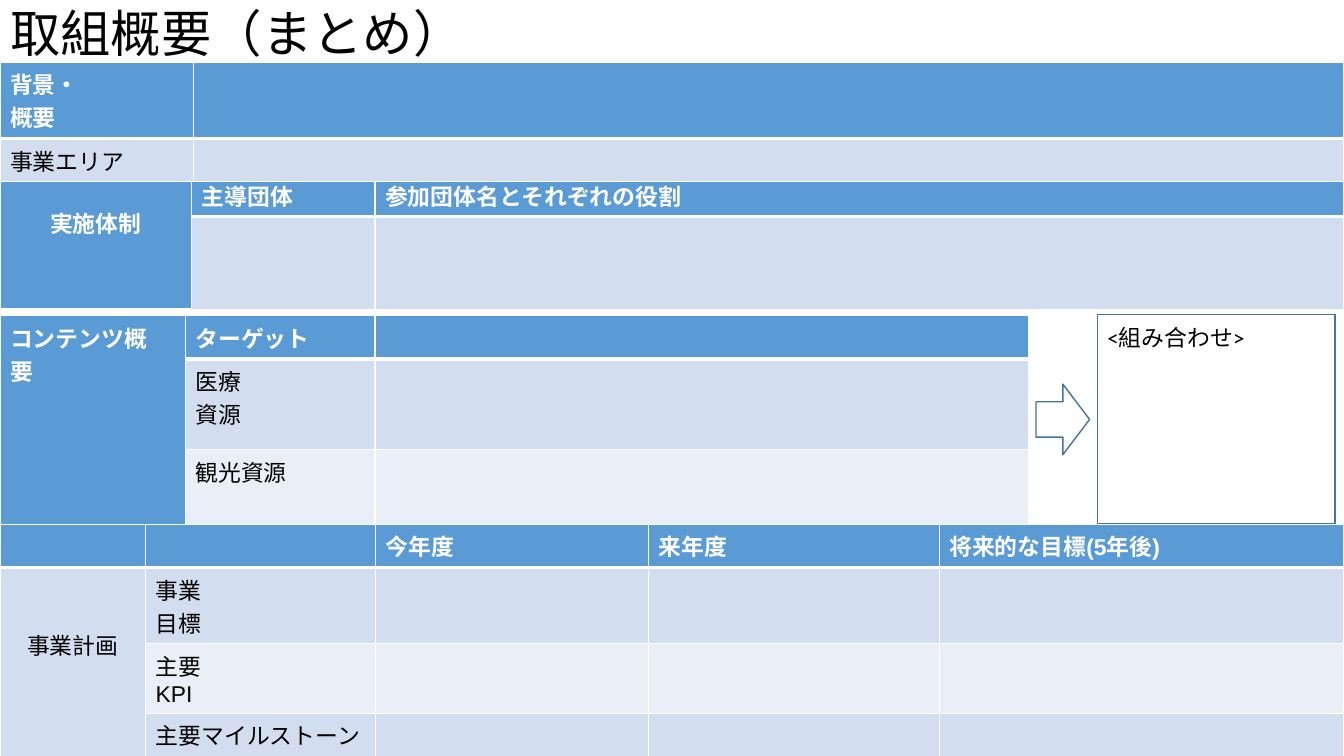
from pptx import Presentation
from pptx.dml.color import RGBColor
from pptx.enum.shapes import MSO_SHAPE as Shape
from pptx.enum.text import MSO_ANCHOR as Anchor, MSO_AUTO_SIZE as AutoSize, PP_ALIGN as Align
from pptx.oxml import parse_xml
from pptx.oxml.ns import nsdecls
from pptx.util import Cm, Pt

BLUE, PALE, PALER = "5B9BD5", "D2DEEF", "EAEFF7"
WHITE, BLACK, OUTLINE = "FFFFFF", "000000", "43739E"
TEXT_SIZE = Pt(16.3)


def color(hex_string):
    return RGBColor.from_string(hex_string)


def add_grid(top, widths, heights, texts, merged=None):
    """Add a full-left table; merged is (row, last row, top margin, alignment) in column 0."""
    frame = slide.shapes.add_table(len(heights), len(widths), 0, Cm(top),
                                   Cm(sum(widths)), Cm(sum(heights)))
    table = frame.table
    for column, width in zip(table.columns, widths):
        column.width = Cm(width)
    for row, height in zip(table.rows, heights):
        row.height = Cm(height)

    for r in range(len(heights)):
        for c in range(len(widths)):
            cell = table.cell(r, c)
            in_header = r == 0 or (c == 0 and merged and merged[0] == 0)
            cell.text = texts.get((r, c), "")
            for para in cell.text_frame.paragraphs:
                para.font.size = TEXT_SIZE
                para.font.name = "Arial"
                para.font.bold = in_header
                para.font.color.rgb = color(WHITE if in_header else BLACK)
            for side in "LRTB":
                thick = (side == "B" and r == 0) or (side == "T" and r == 1)
                cell._tc.get_or_add_tcPr().append(parse_xml(
                    f'<a:ln{side} {nsdecls("a")} w="{Pt(3 if thick else 1)}"><a:solidFill>'
                    f'<a:srgbClr val="{WHITE}"/></a:solidFill></a:ln{side}>'))
            cell.fill.solid()
            banding = PALE if r % 2 or c == 0 else PALER
            cell.fill.fore_color.rgb = color(BLUE if in_header else banding)

    if merged:
        first, last, margin, alignment = merged
        heading = table.cell(first, 0)
        heading.merge(table.cell(last, 0))
        heading.margin_top = Cm(margin)
        for para in heading.text_frame.paragraphs:
            para.alignment = alignment


deck = Presentation()
deck.slide_width, deck.slide_height = Cm(33.87), Cm(19.05)
slide = deck.slides.add_slide(deck.slide_layouts[5])

title = slide.shapes.title
title.left, title.top, title.width, title.height = Cm(0), Cm(0.48), Cm(24.43), Cm(0.86)
title.text = "取組概要（まとめ）"
title.text_frame.auto_size = AutoSize.NONE
title.text_frame.vertical_anchor = Anchor.MIDDLE
para = title.text_frame.paragraphs[0]
para.alignment = Align.LEFT
para.line_spacing = 0.9
para.font.size = Pt(36)
para.font.name = "Calibri"
para.font.color.rgb = color(BLACK)

# Organisation
add_grid(4.37, [4.83, 4.62, 24.42], [1.08, 2.35],
         {(0, 0): "実施体制", (0, 1): "主導団体", (0, 2): "参加団体名とそれぞれの役割"},
         merged=(0, 1, 0.81, Align.CENTER))

# Content
add_grid(7.95, [4.67, 4.78, 16.46], [1.07, 2.29, 1.88],
         {(0, 0): "コンテンツ概\n要", (0, 1): "ターゲット",
          (1, 1): "医療\n資源", (2, 1): "観光資源"},
         merged=(0, 2, 0.13, Align.LEFT))

# Business plan: the label column holds its longest label on one line,
# so the table ends at the bottom edge of the slide
add_grid(13.21, [3.67, 5.8, 6.88, 7.32, 10.2], [1.07, 1.9, 1.75, 1.12],
         {(0, 2): "今年度", (0, 3): "来年度", (0, 4): "将来的な目標(5年後)",
          (1, 0): "事業計画", (1, 1): "事業\n目標", (2, 1): "主要\nKPI",
          (3, 1): "主要マイルストーン"},
         merged=(1, 3, 1.53, Align.CENTER))

# Background and area
add_grid(1.57, [4.88, 28.99], [1.92, 1.07],
         {(0, 0): "背景・\n概要", (1, 0): "事業エリア"})

arrow = slide.shapes.add_shape(Shape.RIGHT_ARROW, Cm(26.11), Cm(9.68), Cm(1.35), Cm(1.78))
box = slide.shapes.add_shape(Shape.RECTANGLE, Cm(27.66), Cm(7.92), Cm(5.99), Cm(5.28))
for shape in (arrow, box):
    shape.shadow.inherit = False
    shape.fill.background()
    shape.line.color.rgb = color(OUTLINE)
    shape.line.width = Pt(1)

box.text_frame.text = "<組み合わせ>"
box.text_frame.vertical_anchor = Anchor.TOP
box.text_frame.margin_top = Cm(0.23)
para = box.text_frame.paragraphs[0]
para.alignment = Align.LEFT
para.font.size = TEXT_SIZE
para.font.name = "Calibri"
para.font.color.rgb = color(BLACK)

deck.save("out.pptx")
